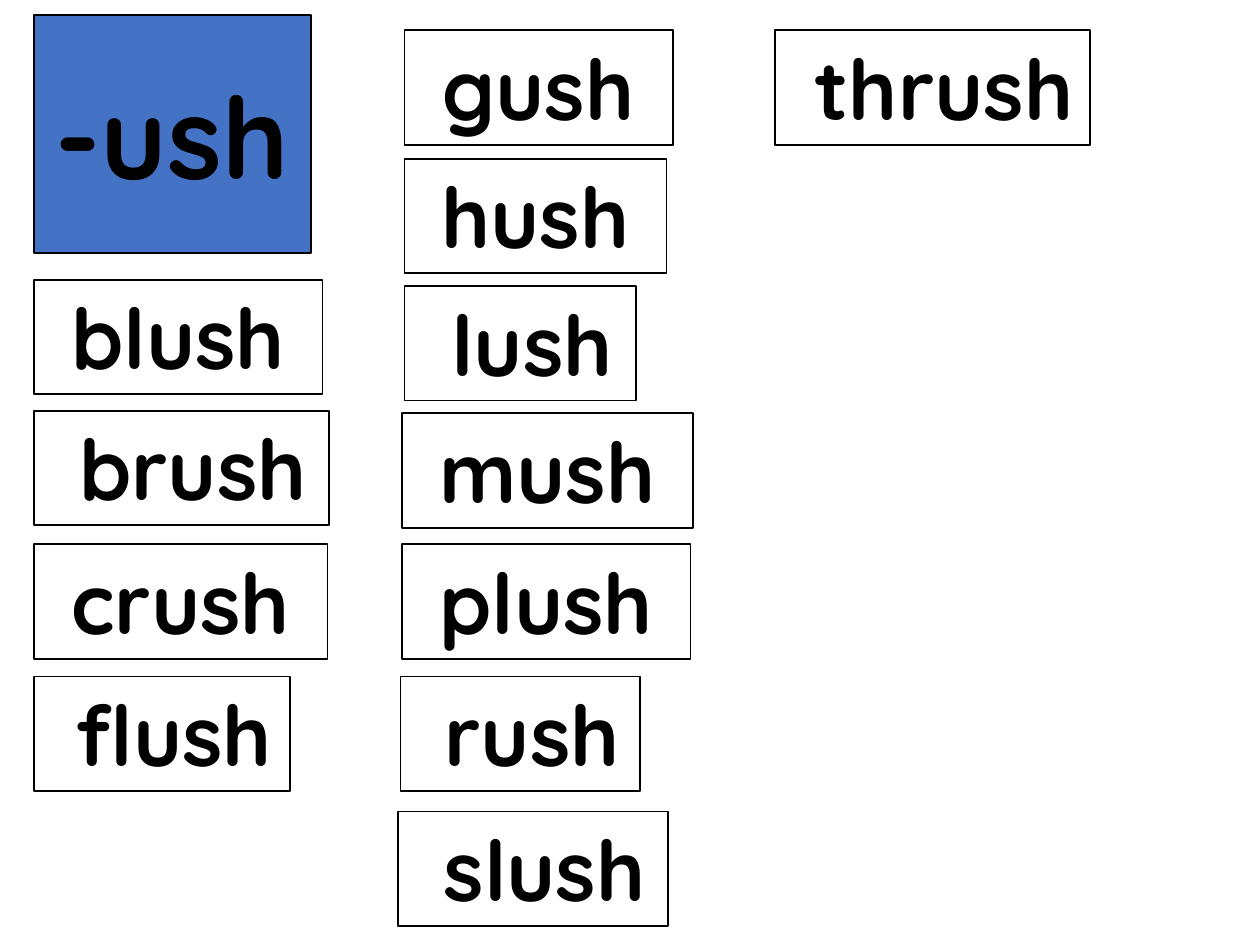
from dataclasses import dataclass

from pptx import Presentation
from pptx.dml.color import RGBColor
from pptx.enum.shapes import MSO_SHAPE
from pptx.enum.text import MSO_ANCHOR, MSO_AUTO_SIZE, PP_ALIGN
from pptx.shapes.autoshape import Shape
from pptx.slide import Slide
from pptx.util import Inches, Pt

RECTANGLE = MSO_SHAPE.RECTANGLE
TOP, MIDDLE = MSO_ANCHOR.TOP, MSO_ANCHOR.MIDDLE
FIT_SHAPE = MSO_AUTO_SIZE.SHAPE_TO_FIT_TEXT
CENTER = PP_ALIGN.CENTER

BLACK = RGBColor(0x00, 0x00, 0x00)
WHITE = RGBColor(0xFF, 0xFF, 0xFF)
BLUE = RGBColor(0x44, 0x72, 0xC4)

FONT = "Quicksand"
WORD_SIZE, ENDING_SIZE = 48, 65
CARD_HEIGHT = 0.91
LEFT_MARGIN = 0.27


@dataclass(frozen=True)
class WordCard:
    word: str
    left: float
    top: float
    width: float


WORD_CARDS = [
    WordCard("gush", 3.21, 0.24, 2.13),
    WordCard("hush", 3.21, 1.26, 2.08),
    WordCard("lush", 3.21, 2.27, 1.84),
    WordCard("mush", 3.19, 3.28, 2.31),
    WordCard("plush", 3.19, 4.32, 2.29),
    WordCard("rush", 3.18, 5.37, 1.9),
    WordCard("slush", 3.16, 6.44, 2.14),
    WordCard("thrush", 6.15, 0.24, 2.5),
    WordCard("blush", LEFT_MARGIN, 2.22, 2.29),
    WordCard("brush", LEFT_MARGIN, 3.26, 2.34),
    WordCard("crush", LEFT_MARGIN, 4.32, 2.33),
    WordCard("flush", LEFT_MARGIN, 5.37, 2.03),
]


def add_box(slide: Slide, text: str, left: float, top: float, width: float,
            height: float, fill: RGBColor, size: int) -> Shape:
    """Add an outlined rectangle with centred bold text; lengths in inches."""
    sp = slide.shapes.add_shape(RECTANGLE, Inches(left), Inches(top),
                                Inches(width), Inches(height))
    sp.shadow.inherit = False
    sp.fill.solid()
    sp.fill.fore_color.rgb = fill
    sp.line.color.rgb = BLACK
    sp.line.width = Pt(1)
    p = sp.text_frame.paragraphs[0]
    p.alignment = CENTER
    r = p.add_run()
    r.text = text
    r.font.name = FONT
    r.font.size = Pt(size)
    r.font.bold = True
    r.font.color.rgb = BLACK
    return sp


def add_word_card(slide: Slide, card: WordCard) -> None:
    sp = add_box(slide, f" {card.word} ", card.left, card.top, card.width,
                 CARD_HEIGHT, WHITE, WORD_SIZE)
    tf = sp.text_frame
    tf.word_wrap = False
    tf.auto_size = FIT_SHAPE
    tf.vertical_anchor = TOP


def add_ending_card(slide: Slide) -> None:
    sp = add_box(slide, "-ush", LEFT_MARGIN, 0.12, 2.2, 1.89, BLUE, ENDING_SIZE)
    sp.text_frame.word_wrap = True
    sp.text_frame.vertical_anchor = MIDDLE


def main() -> None:
    prs = Presentation()
    prs.slide_width, prs.slide_height = Inches(10), Inches(7.5)
    slide = prs.slides.add_slide(prs.slide_layouts[6])
    for card in WORD_CARDS:
        add_word_card(slide, card)
    add_ending_card(slide)
    prs.save("out.pptx")


if __name__ == "__main__":
    main()
